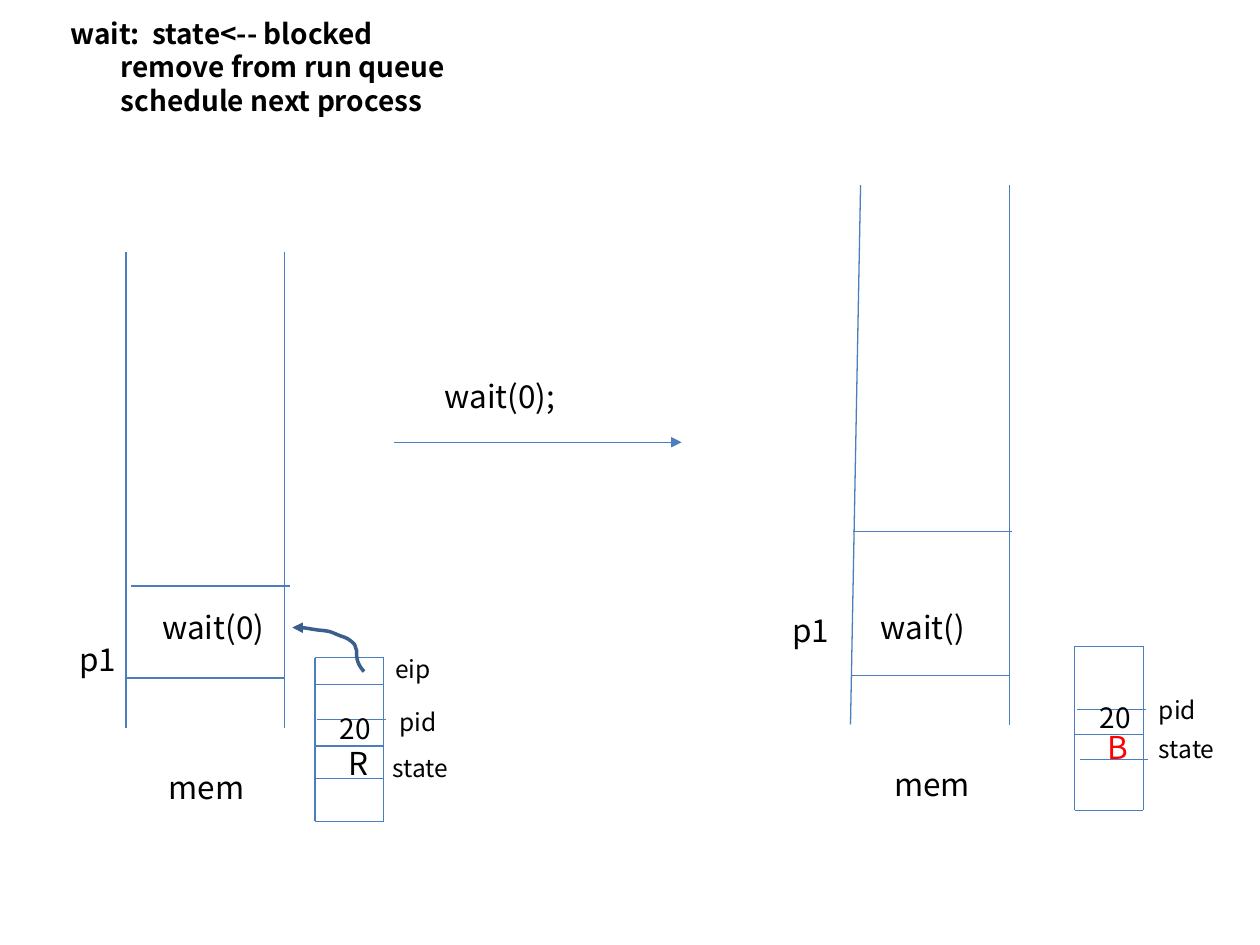
from lxml import etree
from pptx import Presentation
from pptx.dml.color import RGBColor
from pptx.enum.shapes import MSO_CONNECTOR
from pptx.enum.text import MSO_AUTO_SIZE
from pptx.oxml.ns import qn
from pptx.util import Inches, Pt

STRAIGHT = MSO_CONNECTOR.STRAIGHT
FIT_SHAPE = MSO_AUTO_SIZE.SHAPE_TO_FIT_TEXT

THEME = {
    "font": "Noto Sans CJK KR",
    "ink": RGBColor(0x00, 0x00, 0x00),
    "blocked": RGBColor(0xFF, 0x00, 0x00),
    "line": RGBColor(0x4B, 0x7E, 0xBC),
    "pointer": RGBColor(0x3A, 0x5F, 0x8C),
    "thin": 0.75,
    "thick": 2,
    "large": 18,
    "medium": 16,
    "small": 14,
}
HEIGHTS = {"large": 0.4, "medium": 0.37, "small": 0.34}

HEADING = ["wait:  state<-- blocked", "remove from run queue", "schedule next process"]
HEADING_BOX = (0.46, 0.08, 4.88, 0.91)
HEADING_INDENT = 0.4

MEMORY_WIDTH = 1.26
MEMORIES = [
    {"left": 1, "top": 2, "bottom": 5.78, "lean": 0, "dividers": [(1.04, 4.65), (1, 5.38)]},
    {"left": 6.75, "top": 1.47, "bottom": 5.75, "lean": 0.08, "dividers": [(6.77, 4.22), (6.75, 5.36)]},
]

BLOCK_WIDTH, BLOCK_HEIGHT = 0.545, 1.3
CONTROL_BLOCKS = [
    {"left": 2.5, "top": 5.22, "dividers": [(0, 0.21), (0.02, 0.49), (0, 0.7), (0, 0.96)]},
    {"left": 8.53, "top": 5.13, "dividers": [(0.02, 0.5), (0, 0.7), (0.04, 0.9)]},
]

CALL_ARROW = (3.13, 3.51, 5.41, 3.51)

LABELS = [
    ("wait(0);", 3.43, 2.94, 1.97, "large", "ink"),
    ("mem", 1.24, 6.05, 1.26, "large", "ink"),
    ("wait(0)", 1.19, 4.78, 1.03, "large", "ink"),
    ("p1", 0.53, 5.03, 1.21, "large", "ink"),
    ("eip", 3.04, 5.14, 0.7, "small", "ink"),
    ("pid", 3.07, 5.56, 0.7, "small", "ink"),
    ("state", 3.02, 5.93, 0.7, "small", "ink"),
    ("20", 2.6, 5.6, 0.57, "medium", "ink"),
    ("R", 2.67, 5.86, 0.33, "large", "ink"),
    ("mem", 7, 6.02, 1.26, "large", "ink"),
    ("wait()", 6.89, 4.78, 1.03, "large", "ink"),
    ("p1", 6.19, 4.8, 1.21, "large", "ink"),
    ("pid", 9.1, 5.47, 0.7, "small", "ink"),
    ("state", 9.1, 5.78, 0.7, "small", "ink"),
    ("20", 8.63, 5.51, 0.57, "medium", "ink"),
    ("B", 8.69, 5.73, 0.44, "large", "blocked"),
]

POINTER_START = (2.89, 5.33)
POINTER_CURVES = [
    ((2.87, 5.31), (2.85, 5.28), (2.84, 5.25)),
    ((2.83, 5.22), (2.83, 5.19), (2.83, 5.16)),
    ((2.82, 5.14), (2.82, 5.12), (2.81, 5.11)),
    ((2.78, 5.08), (2.75, 5.06), (2.71, 5.05)),
    ((2.61, 5.01), (2.63, 5.01), (2.52, 5)),
    ((2.39, 4.98), (2.42, 4.98), (2.32, 4.98)),
]
CURVE_STEPS = 8


def add_arrowhead(line):
    etree.SubElement(line._get_or_add_ln(), qn("a:tailEnd"), type="triangle")


def add_line(slide, x1, y1, x2, y2):
    connector = slide.shapes.add_connector(STRAIGHT, *map(Inches, (x1, y1, x2, y2)))
    connector.line.color.rgb = THEME["line"]
    connector.line.width = Pt(THEME["thin"])
    etree.SubElement(connector._element.spPr, qn("a:effectLst"))
    return connector


def add_text(slide, text, box, size, color="ink", bold=False):
    frame = slide.shapes.add_textbox(*map(Inches, box)).text_frame
    frame.word_wrap = True
    frame.auto_size = FIT_SHAPE
    frame.text = text
    for paragraph in frame.paragraphs:
        for run in paragraph.runs:
            run.font.name = THEME["font"]
            run.font.size = Pt(THEME[size])
            run.font.bold = bold
            run.font.color.rgb = THEME[color]
    return frame


def add_heading(slide):
    frame = add_text(slide, "\n".join(HEADING), HEADING_BOX, "medium", bold=True)
    for paragraph in frame.paragraphs[1:]:
        paragraph._p.get_or_add_pPr().set("marL", str(Inches(HEADING_INDENT)))


def add_memory(slide, left, top, bottom, lean, dividers):
    right = left + MEMORY_WIDTH
    add_line(slide, left + lean, top, left, bottom)
    add_line(slide, right, top, right, bottom)
    for x, y in dividers:
        add_line(slide, x, y, x + MEMORY_WIDTH, y)


def add_control_block(slide, left, top, dividers):
    for x in (left, left + BLOCK_WIDTH):
        add_line(slide, x, top, x, top + BLOCK_HEIGHT)
    for shift, drop in [(0, 0), *dividers, (0, BLOCK_HEIGHT)]:
        x, y = left + shift, top + drop
        add_line(slide, x, y, x + BLOCK_WIDTH, y)


def curve_points(start, curves):
    points = []
    for first, second, end in curves:
        for step in range(1, CURVE_STEPS + 1):
            t = step / CURVE_STEPS
            u = 1 - t
            weights = (u**3, 3 * u * u * t, 3 * u * t * t, t**3)
            corners = (start, first, second, end)
            points.append(tuple(
                Inches(sum(w * corner[axis] for w, corner in zip(weights, corners)))
                for axis in (0, 1)
            ))
        start = end
    return points


def add_pointer(slide):
    builder = slide.shapes.build_freeform(*map(Inches, POINTER_START))
    builder.add_line_segments(curve_points(POINTER_START, POINTER_CURVES), close=False)
    pointer = builder.convert_to_shape()
    pointer.shadow.inherit = False
    pointer.fill.background()
    pointer.line.color.rgb = THEME["pointer"]
    pointer.line.width = Pt(THEME["thick"])
    add_arrowhead(pointer.line)


def main():
    """Build the slide showing how wait blocks a process."""
    deck = Presentation()
    deck.slide_width, deck.slide_height = Inches(10), Inches(7.5)
    slide = deck.slides.add_slide(deck.slide_layouts.get_by_name("Blank"))
    add_heading(slide)
    for memory in MEMORIES:
        add_memory(slide, **memory)
    for block in CONTROL_BLOCKS:
        add_control_block(slide, **block)
    add_arrowhead(add_line(slide, *CALL_ARROW).line)
    for text, left, top, width, size, color in LABELS:
        add_text(slide, text, (left, top, width, HEIGHTS[size]), size, color)
    add_pointer(slide)
    deck.save("out.pptx")


if __name__ == "__main__":
    main()
